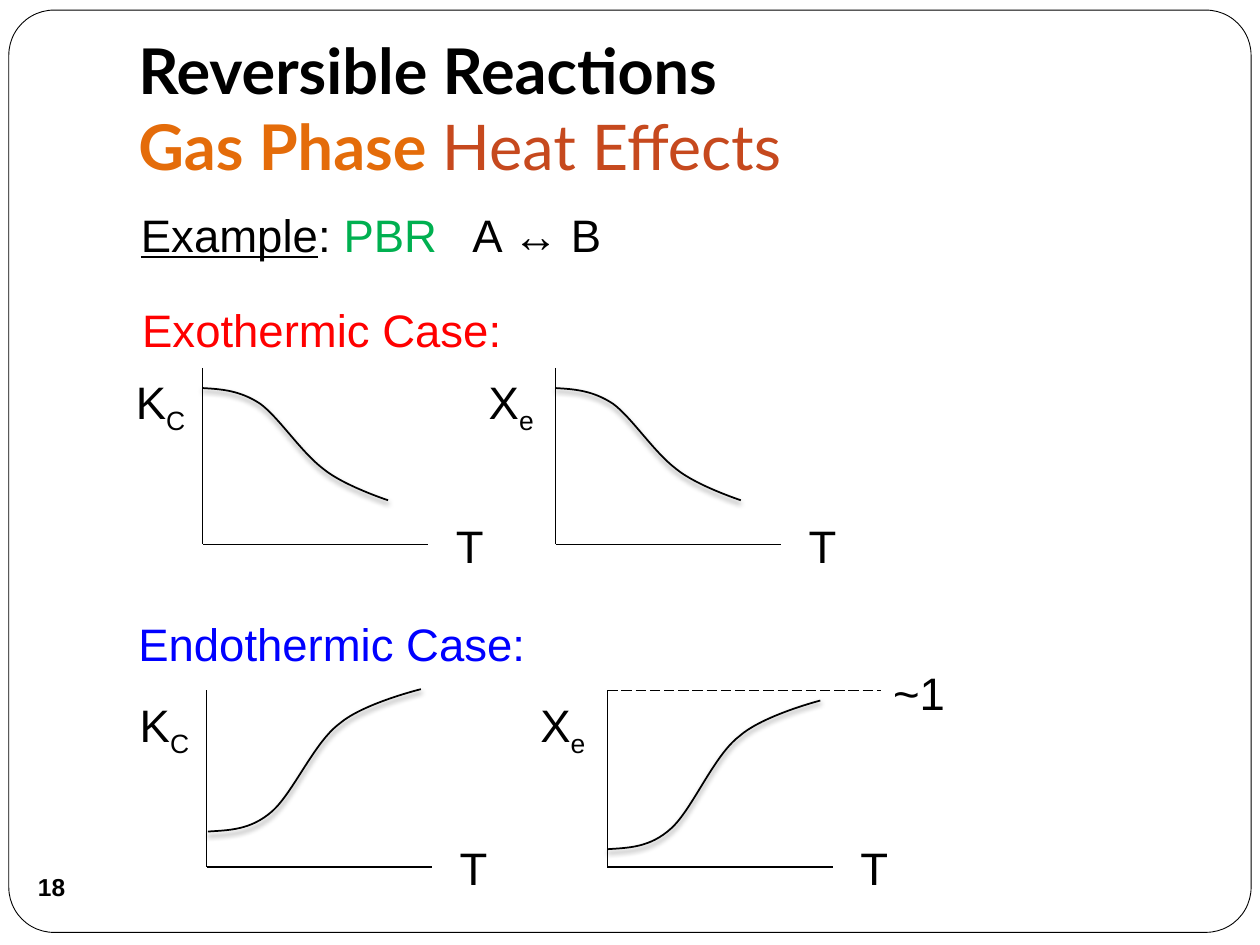
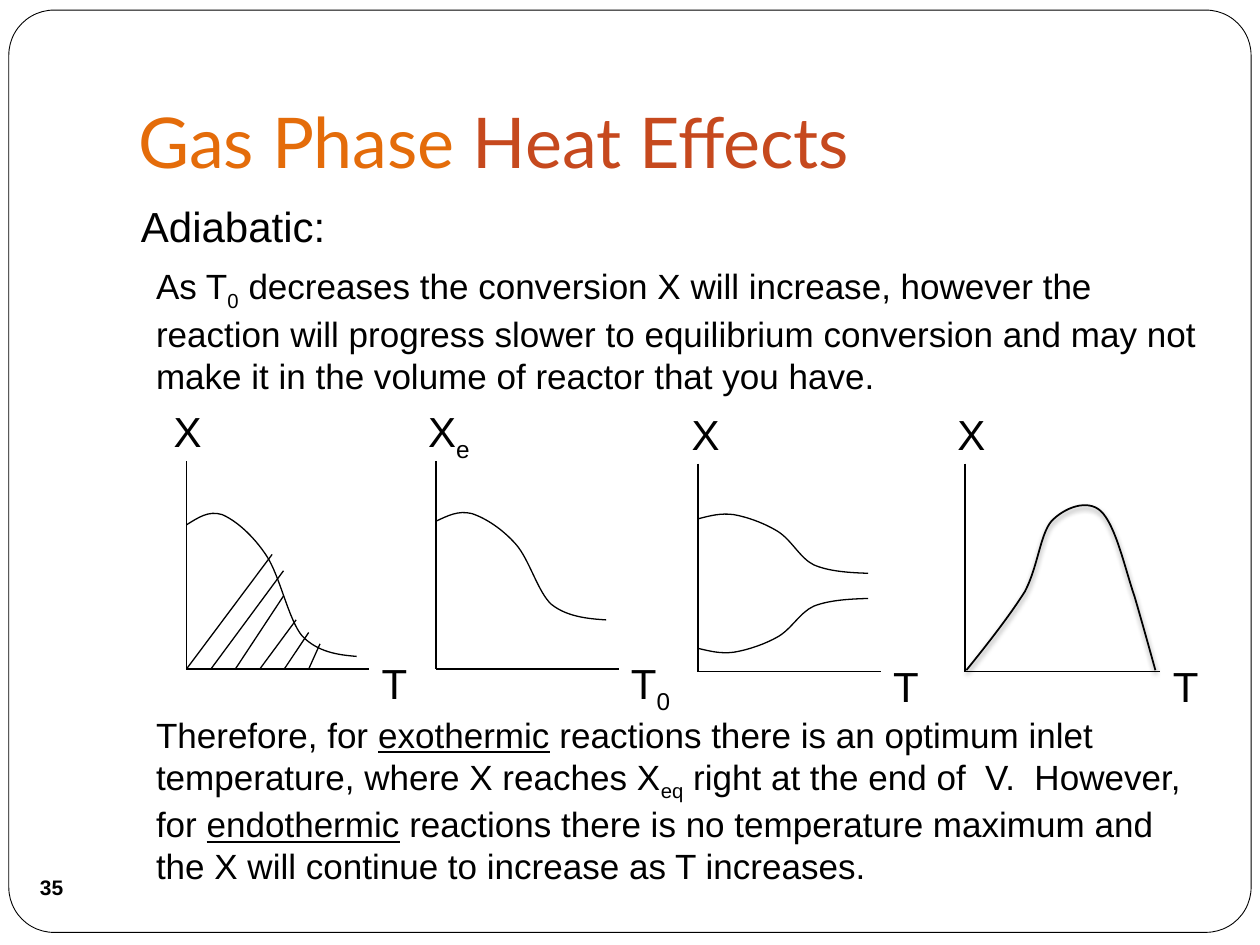
from lxml import etree
from pptx import Presentation
from pptx.dml.color import RGBColor
from pptx.enum import dml, shapes, text
from pptx.oxml import ns
from pptx.util import Emu, Pt

EMU_PER_PX = 9144
BLACK, WHITE = "000000", "FFFFFF"
ORANGE, RUST = "E46C0A", "C6491E"
RED, BLUE, GREEN = "FF0000", "0000FF", "00B050"
LABEL_HEIGHTS = {26: 54, 24: 50}

FALLING = [(0, 0), (10, 1), (20, 2), (31, 14), (41, 26), (53, 57), (65, 72),
           (76, 87), (100, 100), (100, 100)]
S_CURVE = [(0, 0), (10, 1), (20, 1), (30, 14), (40, 27), (50, 63), (62, 76),
           (73, 90), (100, 100), (100, 100)]
WAVE = [(0, 10), (7, 5), (13, 0), (21, 3), (29, 7), (39, 17), (47, 31),
        (55, 45), (60, 75), (68, 86), (77, 97), (89, 99), (100, 100)]
HUMP = [(0, 100), (11, 85), (23, 68), (31, 54), (38, 39), (39, 21), (45, 13),
        (52, 5), (64, 0), (71, 7), (79, 15), (84, 41), (89, 57), (93, 72),
        (100, 100), (100, 100)]
HATCH_ENDS = [(68, 91), (77, 78), (77, 58), (87, 39), (97, 29), (106, 20)]
HATCH_STEP = 97 / 5


def px(value):
    return Emu(round(value * EMU_PER_PX))


def color(hex_string):
    return RGBColor.from_string(hex_string)


def add_runs(paragraph, runs, size, font="Arial"):
    for words, style in runs:
        run = paragraph.add_run()
        run.text = words
        run.font.name = font
        run.font.size = Pt(size)
        run.font.bold = style.get("bold", False)
        run.font.underline = style.get("underline", False)
        run.font.color.rgb = color(style.get("color", BLACK))
        if style.get("sub"):
            run.font._element.set("baseline", "-25000")


def add_text(slide, left, top, width, height, runs, size):
    box = slide.shapes.add_textbox(px(left), px(top), px(width), px(height))
    box.text_frame.word_wrap = True
    add_runs(box.text_frame.paragraphs[0], runs, size)
    return box.text_frame


def add_tab_stop(paragraph, position):
    tabs = etree.SubElement(paragraph._p.get_or_add_pPr(), ns.qn("a:tabLst"))
    etree.SubElement(tabs, ns.qn("a:tab"), pos=str(px(position)), algn="l")


def add_line(slide, start, end, dashed=False):
    line = slide.shapes.add_connector(
        shapes.MSO_CONNECTOR.STRAIGHT, *map(px, (*start, *end)))
    line.line.color.rgb = color(BLACK)
    line.line.width = Pt(0.75)
    if dashed:
        line.line.dash_style = dml.MSO_LINE.LONG_DASH
    etree.SubElement(line._element.spPr, ns.qn("a:effectLst"))


def add_soft_shadow(shape):
    effects = shape._element.spPr.find(ns.qn("a:effectLst"))
    shadow = etree.SubElement(effects, ns.qn("a:outerShdw"), blurRad="38100",
                              dist="25400", dir="5400000", rotWithShape="0")
    tint = etree.SubElement(shadow, ns.qn("a:srgbClr"), val=BLACK)
    etree.SubElement(tint, ns.qn("a:alpha"), val="50000")


def bend_segments(shape):
    segments = list(shape._element.iter(ns.qn("a:lnTo")))
    for first in range(0, len(segments), 3):
        bend = etree.Element(ns.qn("a:cubicBezTo"))
        segments[first].addprevious(bend)
        for segment in segments[first:first + 3]:
            bend.append(segment[0])
            segment.getparent().remove(segment)


def add_curve(slide, profile, left, top, width, height, shadowed):
    points = [(px(left + x * width / 100), px(top + y * height / 100))
              for x, y in profile]
    builder = slide.shapes.build_freeform(*points[0])
    builder.add_line_segments(points[1:], close=False)
    curve = builder.convert_to_shape()
    bend_segments(curve)
    curve.shadow.inherit = False
    curve.fill.background()
    curve.line.color.rgb = color(BLACK)
    curve.line.width = Pt(1 if shadowed else 0.75)
    if shadowed:
        add_soft_shadow(curve)


def add_plot(slide, box, names, offsets, label_widths, size, curves,
             shadowed=False):
    left, top, width, height = box
    right, bottom = left + width, top + height
    add_line(slide, (left, top), (left, bottom))
    add_line(slide, (left, bottom), (right, bottom))
    corners = ((left, top), (right, bottom))
    for name, corner, offset, label_width in zip(names, corners, offsets,
                                                 label_widths):
        runs = [(name[0], {})]
        if name[1:]:
            runs.append((name[1:], {"sub": True}))
        add_text(slide, corner[0] + offset[0], corner[1] + offset[1],
                 label_width, LABEL_HEIGHTS[size], runs, size)
    for profile, dx, dy, curve_width, curve_height in curves:
        add_curve(slide, profile, left + dx, top + dy, curve_width,
                  curve_height, shadowed)


def add_base(presentation, number, number_size, title_lines, title_size):
    slide = presentation.slides.add_slide(presentation.slide_layouts[6])
    frame = slide.shapes.add_shape(shapes.MSO_SHAPE.ROUNDED_RECTANGLE,
                                   *map(px, (7, 8, 986, 732)))
    frame.adjustments[0] = 0.049
    frame.line.color.rgb = color(BLACK)
    frame.line.width = Pt(0.5)
    badge = slide.shapes.add_shape(shapes.MSO_SHAPE.OVAL,
                                   *map(px, (16, 679, 50, 50)))
    badge.line.fill.background()
    for shape in (frame, badge):
        shape.shadow.inherit = False
        shape.fill.solid()
        shape.fill.fore_color.rgb = color(WHITE)
    label = badge.text_frame
    label.margin_left = label.margin_right = 0
    label.margin_top = label.margin_bottom = 0
    label.word_wrap = False
    label.vertical_anchor = text.MSO_ANCHOR.MIDDLE
    label.paragraphs[0].alignment = text.PP_ALIGN.CENTER
    add_runs(label.paragraphs[0], [(number, {"bold": True})], number_size)

    title = slide.shapes.add_textbox(*map(px, (100, 30, 850, 125))).text_frame
    title.word_wrap = True
    title.vertical_anchor = text.MSO_ANCHOR.BOTTOM
    title.margin_bottom = px(10)
    paragraph = title.paragraphs[0]
    for index, runs in enumerate(title_lines):
        if index:
            paragraph.add_line_break()
        add_runs(paragraph, runs, title_size, "Lato")
    return slide


def add_case(slide, heading, heading_color, box, plots):
    add_text(slide, *box, [(heading, {"color": heading_color})], 26)
    for y_name, axis_left, axis_top, x_width, curve in plots:
        add_plot(slide, (axis_left, axis_top, 179, 140), (y_name, "T"),
                 ((-63, 0), (12, -26)), (76, x_width), 26, [curve],
                 shadowed=True)


def build_cases_slide(presentation):
    slide = add_base(presentation, "18", 14, [
        [("Reversible Reactions", {"bold": True})],
        [("Gas Phase ", {"color": ORANGE, "bold": True}),
         ("Heat Effects", {"color": RUST})]], 36)
    example = add_text(slide, 102, 159, 522, 54,
                       [("Example", {"underline": True}), (": ", {}),
                        ("PBR\t", {"color": GREEN}), ("A ↔ B", {})], 26)
    add_tab_stop(example.paragraphs[0], 263)
    falling = (FALLING, 0, 16, 147, 89)
    add_case(slide, "Exothermic Case:", RED, (103, 235, 399, 54),
             [("KC", 161, 292, 51, falling), ("Xe", 441, 292, 38, falling)])
    add_case(slide, "Endothermic Case:", BLUE, (100, 484, 416, 54),
             [("KC", 164, 548, 51, (S_CURVE, 1, 112, 169, -113)),
              ("Xe", 482, 548, 64, (S_CURVE, 0, 126, 169, -118))])
    add_line(slide, (482, 548), (699, 548), dashed=True)
    add_text(slide, 699, 523, 89, 54, [("~1", {})], 26)


def add_hatching(slide, left, bottom):
    for index, (dx, rise) in enumerate(HATCH_ENDS):
        add_line(slide, (left + index * HATCH_STEP, bottom),
                 (left + dx, bottom - rise))


def build_adiabatic_slide(presentation):
    slide = add_base(presentation, "35", 12, [
        [("Gas Phase ", {"color": ORANGE}), ("Heat Effects", {"color": RUST})]], 40)
    add_text(slide, 102, 154, 358, 50, [("Adiabatic:", {})], 24)
    body = add_text(slide, 114, 205, 850, 595, [
        ("As T", {}), ("0", {"sub": True}),
        (" decreases the conversion X will increase, however the reaction will "
         "progress slower to equilibrium conversion and may not make it in the "
         "volume of reactor that you have.", {})], 20)
    conclusion = body.add_paragraph()
    conclusion.space_before = Pt(181)
    add_runs(conclusion, [
        ("Therefore, for ", {}), ("exothermic", {"underline": True}),
        (" reactions there is an optimum inlet temperature, where X reaches X", {}),
        ("eq", {"sub": True}),
        (" right at the end of  V.  However, for ", {}),
        ("endothermic", {"underline": True}),
        (" reactions there is no temperature maximum and the X will continue to "
         "increase as T increases.", {})], 20)
    plots = [
        ((148, 366, 145, 165), ("X", "T"), -20, (77, 77),
         [(WAVE, 0, 39, 135, 116)]),
        ((346, 366, 145, 165), ("Xe", "T0"), -16, (77, 77),
         [(WAVE, 0, 39, 135, 87)]),
        ((554, 368, 145, 165), ("X", "T"), -15, (77, 77),
         [(WAVE, 0, 39, 135, 48), (WAVE, 0, 151, 135, -44)]),
        ((766, 368, 155, 165), ("X", "T"), -16, (49, 36),
         [(HUMP, 1, 28, 150, 136)])]
    for box, names, shift, label_widths, curves in plots:
        add_plot(slide, box, names, ((shift, -49), (0, -14)), label_widths, 24,
                 curves, shadowed=curves[0][0] is HUMP)
    add_hatching(slide, 148, 531)


def main():
    presentation = Presentation()
    presentation.slide_width, presentation.slide_height = px(1000), px(750)
    build_cases_slide(presentation)
    build_adiabatic_slide(presentation)
    presentation.save("out.pptx")


if __name__ == "__main__":
    main()
